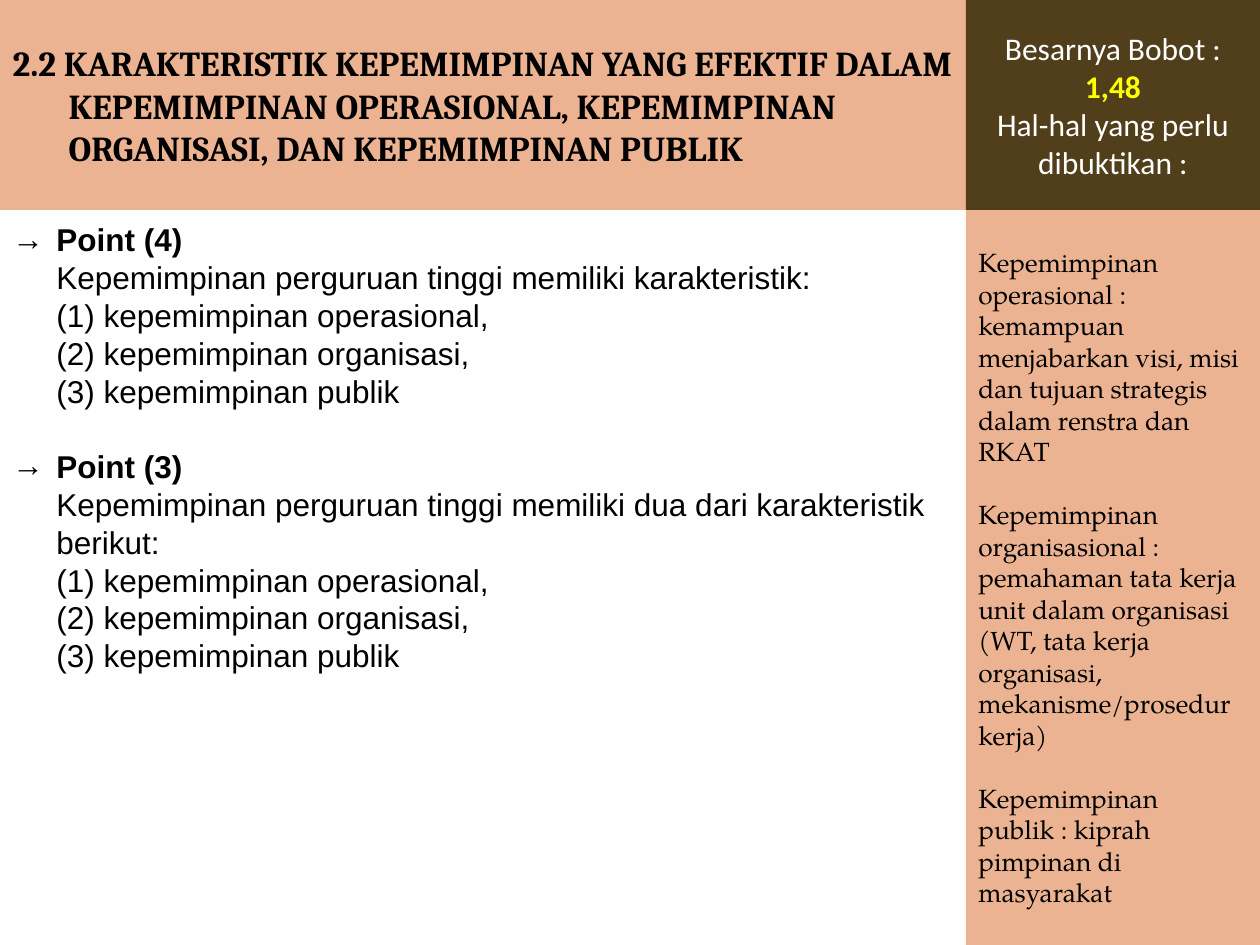
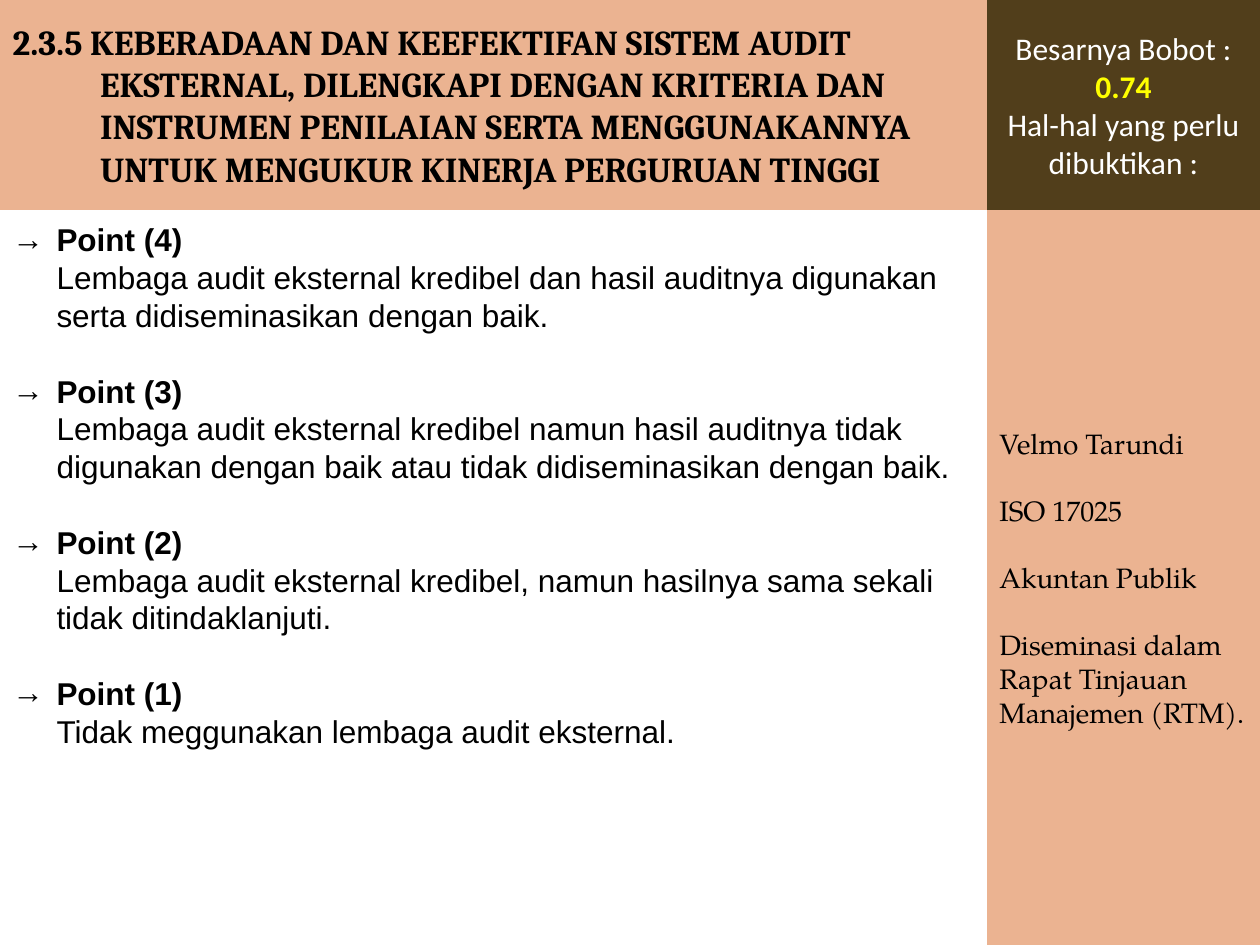
"""Build two scoring slides with a title band, a points list and a proof column."""
from dataclasses import dataclass

from lxml import etree
from pptx import Presentation
from pptx.dml.color import RGBColor
from pptx.enum import shapes, text
from pptx.oxml import ns
from pptx.util import Pt


@dataclass(frozen=True)
class Theme:
    peach: str = "EBB391"
    brown: str = "513E1B"
    black: str = "000000"
    white: str = "FFFFFF"
    yellow: str = "FFFF00"
    head: str = "Cambria"
    body: str = "Arial"
    side: str = "TeX Gyre Pagella"
    score: str = "Calibri"
    headsize: float = 20
    size: float = 18
    lead: float = 1.2


@dataclass(frozen=True)
class Box:
    left: float
    top: float
    width: float
    height: float


@dataclass(frozen=True)
class Point:
    grade: int
    lines: tuple[str, ...]


@dataclass(frozen=True)
class Page:
    title: str
    hang: float
    band: float
    split: float
    wide: float
    weight: str
    points: tuple[Point, ...]
    proofs: tuple[str, ...]
    proofsize: float


THEME = Theme()
WIDTH, HEIGHT, TOP = 720, 540, 120
LIST_TOP, INDENT = 122.4, 25.2

KINDS = (
    "(1) kepemimpinan operasional,",
    "(2) kepemimpinan organisasi,",
    "(3) kepemimpinan publik",
)

PAGES = (
    Page(
        "2.2 KARAKTERISTIK KEPEMIMPINAN YANG EFEKTIF DALAM KEPEMIMPINAN "
        "OPERASIONAL, KEPEMIMPINAN ORGANISASI, DAN KEPEMIMPINAN PUBLIK",
        32, 558, 552, 546, "1,48",
        (
            Point(4, ("Kepemimpinan perguruan tinggi memiliki karakteristik:", *KINDS)),
            Point(3, ("Kepemimpinan perguruan tinggi memiliki dua dari "
                      "karakteristik berikut:", *KINDS)),
        ),
        (
            "Kepemimpinan operasional : kemampuan menjabarkan visi, misi dan "
            "tujuan strategis dalam renstra dan RKAT",
            "Kepemimpinan organisasional : pemahaman tata kerja unit dalam "
            "organisasi (WT, tata kerja organisasi, mekanisme/prosedur kerja)",
            "Kepemimpinan publik : kiprah pimpinan di masyarakat",
        ),
        15,
    ),
    Page(
        "2.3.5 KEBERADAAN DAN KEEFEKTIFAN SISTEM AUDIT EKSTERNAL, DILENGKAPI "
        "DENGAN KRITERIA DAN INSTRUMEN PENILAIAN SERTA MENGGUNAKANNYA UNTUK "
        "MENGUKUR KINERJA PERGURUAN TINGGI",
        50, 564, 564, 564, "0.74",
        (
            Point(4, ("Lembaga audit eksternal kredibel dan hasil auditnya "
                      "digunakan serta didiseminasikan dengan baik.",)),
            Point(3, ("Lembaga audit eksternal kredibel namun hasil auditnya tidak "
                      "digunakan dengan baik atau tidak didiseminasikan dengan baik.",)),
            Point(2, ("Lembaga audit eksternal kredibel, namun hasilnya sama sekali "
                      "tidak ditindaklanjuti.",)),
            Point(1, ("Tidak meggunakan lembaga audit eksternal.",)),
        ),
        (
            "Velmo Tarundi",
            "ISO 17025",
            "Akuntan Publik",
            "Diseminasi dalam Rapat Tinjauan Manajemen (RTM).",
        ),
        16,
    ),
)


def add_run(para, words: str, font: str, size: float,
            color: str = THEME.black, bold: bool = False) -> None:
    run = para.add_run()
    run.text = words
    run.font.name = font
    run.font.size = Pt(size)
    run.font.bold = bold
    run.font.color.rgb = RGBColor.from_string(color)


def next_para(frame, first: bool, align=text.PP_ALIGN.LEFT):
    para = frame.paragraphs[0] if first else frame.add_paragraph()
    para.alignment = align
    return para


def set_indent(para, left: float, first: float = 0, mark: str = "") -> None:
    props = para._p.get_or_add_pPr()
    props.set("marL", str(Pt(left)))
    props.set("indent", str(Pt(first)))
    if mark:
        etree.SubElement(props, ns.qn("a:buFont"), typeface=THEME.body)
        etree.SubElement(props, ns.qn("a:buChar"), char=mark)


def set_lead(para, size: float, gap: bool) -> None:
    pitch = Pt(round(size * THEME.lead, 2))
    para.line_spacing = pitch
    para.space_before = pitch if gap else Pt(0)


def place(shape, box: Box) -> None:
    shape.left, shape.top = Pt(box.left), Pt(box.top)
    shape.width, shape.height = Pt(box.width), Pt(box.height)


def style(shape, color: str):
    shape.fill.solid()
    shape.fill.fore_color.rgb = RGBColor.from_string(color)
    shape.line.fill.background()
    frame = shape.text_frame
    frame.word_wrap = True
    frame.auto_size = text.MSO_AUTO_SIZE.NONE
    frame.vertical_anchor = text.MSO_ANCHOR.MIDDLE
    return frame


def add_panel(slide, box: Box, color: str):
    shape = slide.shapes.add_shape(shapes.MSO_SHAPE.RECTANGLE, 0, 0, 0, 0)
    place(shape, box)
    shape.shadow.inherit = False
    return style(shape, color)


def draw_title(slide, page: Page) -> None:
    title = slide.shapes.title
    place(title, Box(0, 0, page.band, TOP))
    para = next_para(style(title, THEME.peach), True)
    set_indent(para, page.hang, -page.hang)
    add_run(para, page.title, THEME.head, THEME.headsize, bold=True)


def draw_proofs(slide, page: Page) -> None:
    box = Box(page.split, TOP, WIDTH - page.split, HEIGHT - TOP)
    frame = add_panel(slide, box, THEME.peach)
    for row, proof in enumerate(page.proofs):
        para = next_para(frame, row == 0)
        set_lead(para, page.proofsize, row > 0)
        add_run(para, proof, THEME.side, page.proofsize)


def draw_points(slide, page: Page) -> None:
    shape = slide.shapes.add_textbox(0, 0, 0, 0)
    place(shape, Box(0, LIST_TOP, page.wide, HEIGHT - LIST_TOP))
    frame = shape.text_frame
    frame.word_wrap = True
    for row, point in enumerate(page.points):
        para = next_para(frame, row == 0)
        set_lead(para, THEME.size, row > 0)
        set_indent(para, INDENT, -INDENT, "→")
        add_run(para, f"Point ({point.grade})", THEME.body, THEME.size, bold=True)
        for line in point.lines:
            para = next_para(frame, False)
            set_lead(para, THEME.size, False)
            set_indent(para, INDENT)
            add_run(para, line, THEME.body, THEME.size)


def draw_score(slide, page: Page) -> None:
    frame = add_panel(slide, Box(page.split, 0, WIDTH - page.split, TOP), THEME.brown)
    para = next_para(frame, True, text.PP_ALIGN.CENTER)
    add_run(para, "Besarnya Bobot : ", THEME.score, THEME.size, THEME.white)
    add_run(para, page.weight, THEME.score, THEME.size, THEME.yellow, True)
    para = next_para(frame, False, text.PP_ALIGN.CENTER)
    add_run(para, "Hal-hal yang perlu dibuktikan :", THEME.score, THEME.size, THEME.white)


def main() -> None:
    deck = Presentation()
    deck.slide_width, deck.slide_height = Pt(WIDTH), Pt(HEIGHT)
    for page in PAGES:
        slide = deck.slides.add_slide(deck.slide_layouts[5])
        for draw in (draw_title, draw_proofs, draw_points, draw_score):
            draw(slide, page)
    deck.save("out.pptx")


if __name__ == "__main__":
    main()
